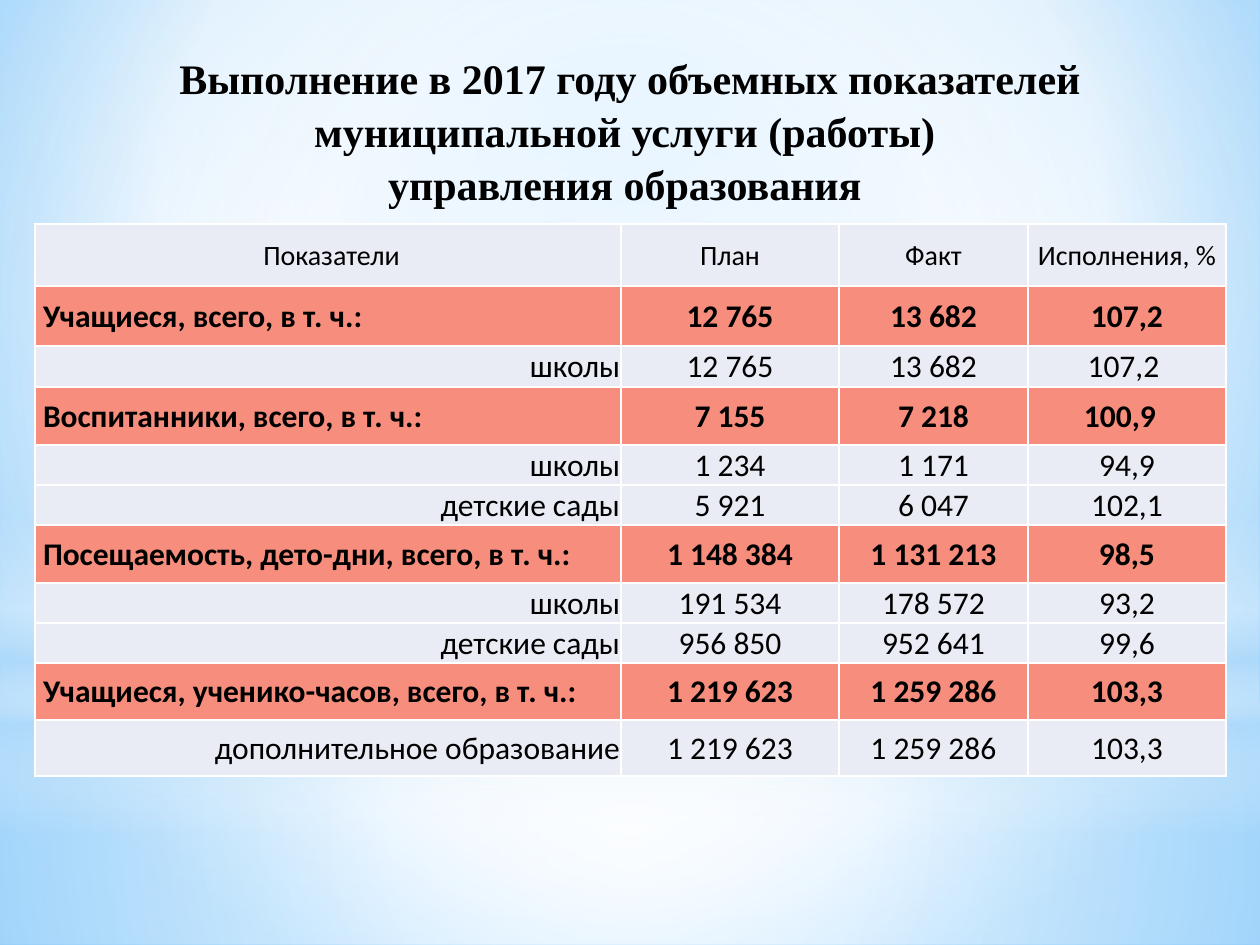
from typing import NamedTuple

from lxml.etree import SubElement
from pptx import Presentation
from pptx.dml.color import RGBColor
from pptx.enum.shapes import MSO_SHAPE
from pptx.enum.text import MSO_ANCHOR, PP_ALIGN
from pptx.oxml.ns import qn
from pptx.util import Emu, Pt

BLACK = RGBColor(0x00, 0x00, 0x00)
WHITE = RGBColor(0xFF, 0xFF, 0xFF)
SKY = RGBColor(0xB4, 0xDC, 0xFA)
PALE = RGBColor(0x9E, 0xD5, 0xFF)
BLUE = RGBColor(0x5B, 0xB9, 0xFF)
LILAC = RGBColor(0xE9, 0xEB, 0xF5)
CORAL = RGBColor(0xF7, 0x8D, 0x7C)
CENTER = (50, 50, 50, 50)


class Stop(NamedTuple):
    at: int
    color: RGBColor
    alpha: int = 100


class Glow(NamedTuple):
    kind: MSO_SHAPE
    top: int
    height: int
    stops: list[Stop]
    focus: tuple | None = CENTER


class Row(NamedTuple):
    height: int
    cells: tuple
    total: bool = False
    tail: int = 1


GLOWS = [
    Glow(MSO_SHAPE.RECTANGLE, 703, 242,
         [Stop(0, WHITE, 91), Stop(37, WHITE, 76), Stop(100, SKY, 79)]),
    Glow(MSO_SHAPE.RECTANGLE, 0, 703,
         [Stop(0, WHITE, 89), Stop(48, WHITE, 62), Stop(100, SKY, 79)]),
    Glow(MSO_SHAPE.RECTANGLE, 519, 315,
         [Stop(0, WHITE, 0), Stop(29, WHITE, 30), Stop(45, SKY, 40),
          Stop(55, WHITE, 26), Stop(65, SKY, 60), Stop(100, WHITE, 0)], None),
    Glow(MSO_SHAPE.OVAL, 220, 703, [Stop(0, WHITE), Stop(56, WHITE, 0)]),
]
COLS = [586, 218, 189, 198]
ROWS = [
    Row(62, ("Показатели", "План", "Факт", "Исполнения, %")),
    Row(60, ("Учащиеся, всего, в т. ч.:", "12 765", "13 682", "107,2"), True),
    Row(41, ("школы", "12 765", "13 682", "107,2"), tail=8),
    Row(58, ("Воспитанники, всего, в т. ч.:", "7 155", "7 218", "100,9"), True, 15),
    Row(40, ("школы", "1 234", "1 171", "94,9")),
    Row(40, ("детские сады", "5 921", "6 047", "102,1")),
    Row(58, ("Посещаемость, дето-дни, всего, в т. ч.:",
             "1 148 384", "1 131 213", "98,5"), True),
    Row(40, ("школы", "191 534", "178 572", "93,2")),
    Row(40, ("детские сады", "956 850", "952 641", "99,6")),
    Row(57, ("Учащиеся, ученико-часов, всего, в т. ч.:",
             "1 219 623", "1 259 286", "103,3"), True),
    Row(56, ("дополнительное образование", "1 219 623", "1 259 286", "103,3")),
]


def px(n: int) -> Emu:
    return Emu(round(n * 914400 / 126))


def shade(owner, stops: list[Stop], focus: tuple | None) -> None:
    owner.fill.gradient()
    grad = next(owner.element.iter(qn("a:gradFill")))
    for child in list(grad):
        grad.remove(child)
    items = SubElement(grad, qn("a:gsLst"))
    for stop in stops:
        mark = SubElement(items, qn("a:gs"), pos=str(stop.at * 1000))
        tint = SubElement(mark, qn("a:srgbClr"), val=str(stop.color))
        if stop.alpha < 100:
            SubElement(tint, qn("a:alpha"), val=str(stop.alpha * 1000))
    if focus:
        route = SubElement(grad, qn("a:path"), path="circle")
        sides = {side: str(n * 1000) for side, n in zip("ltrb", focus)}
        SubElement(route, qn("a:fillToRect"), **sides)
    else:
        SubElement(grad, qn("a:lin"), ang="5400000", scaled="0")


def draw_glow(slide, glow: Glow) -> None:
    shape = slide.shapes.add_shape(
        glow.kind, 0, px(glow.top), px(1260), px(glow.height))
    shape.shadow.inherit = False
    shape.line.fill.background()
    shade(shape, glow.stops, glow.focus)


def draw_title(slide) -> None:
    box = slide.shapes.add_textbox(px(63), px(45), px(1134), px(169))
    frame = box.text_frame
    frame.word_wrap = True
    frame.vertical_anchor = MSO_ANCHOR.MIDDLE
    para = frame.paragraphs[0]
    para.text = ("Выполнение в 2017 году объемных показателей "
                 "муниципальной услуги (работы) \vуправления образования ")
    para.alignment = PP_ALIGN.CENTER
    para.line_spacing = 1.05
    font = para.font
    font.name, font.size, font.bold = "Times New Roman", Pt(24), True
    font.color.rgb = BLACK


def edge(cell) -> None:
    props = cell._tc.get_or_add_tcPr()
    for i, side in enumerate(("lnL", "lnR", "lnT", "lnB")):
        line = props.makeelement(qn(f"a:{side}"), {"w": str(Pt(1))})
        fill = SubElement(line, qn("a:solidFill"))
        SubElement(fill, qn("a:srgbClr"), val=str(WHITE))
        props.insert(i, line)


def fill_cell(cell, text: str, row: Row, align: PP_ALIGN, size: int) -> None:
    cell.fill.solid()
    cell.fill.fore_color.rgb = CORAL if row.total else LILAC
    cell.vertical_anchor = MSO_ANCHOR.MIDDLE
    cell.margin_left = cell.margin_right = cell.margin_top = px(1)
    cell.margin_bottom = 0
    para = cell.text_frame.paragraphs[0]
    para.text = text
    para.alignment = align
    font = para.font
    font.name, font.size, font.bold = "Calibri", Pt(size), row.total
    font.color.rgb = BLACK
    edge(cell)


def draw_table(slide) -> None:
    table = slide.shapes.add_table(
        len(ROWS), len(COLS), px(35), px(224), px(sum(COLS)),
        px(sum(row.height for row in ROWS))).table
    table.first_row = table.horz_banding = False
    for col, width in zip(table.columns, COLS):
        col.width = px(width)
    for r, row in enumerate(ROWS):
        table.rows[r].height = px(row.height)
        side = PP_ALIGN.LEFT if row.total else PP_ALIGN.RIGHT
        for c, text in enumerate(row.cells):
            align = side if r and c == 0 else PP_ALIGN.CENTER
            fill_cell(table.cell(r, c), text, row, align, 18 if r else 16)
        if row.total or r == 0:
            table.cell(r, 0).margin_left = px(8)
        table.cell(r, 3).margin_right = px(row.tail)


def main() -> None:
    """Build the slide on education targets met in 2017."""
    deck = Presentation()
    deck.slide_width, deck.slide_height = px(1260), px(945)
    slide = deck.slides.add_slide(deck.slide_layouts[6])
    slide.background.fill.gradient()
    back = Back(slide.background.fill, slide.element)
    shade(back, [Stop(0, PALE), Stop(60, WHITE), Stop(100, BLUE)], (20, 10, 20, 60))
    for glow in GLOWS:
        draw_glow(slide, glow)
    draw_title(slide)
    draw_table(slide)
    deck.save("out.pptx")


class Back(NamedTuple):
    fill: object
    element: object


if __name__ == "__main__":
    main()
